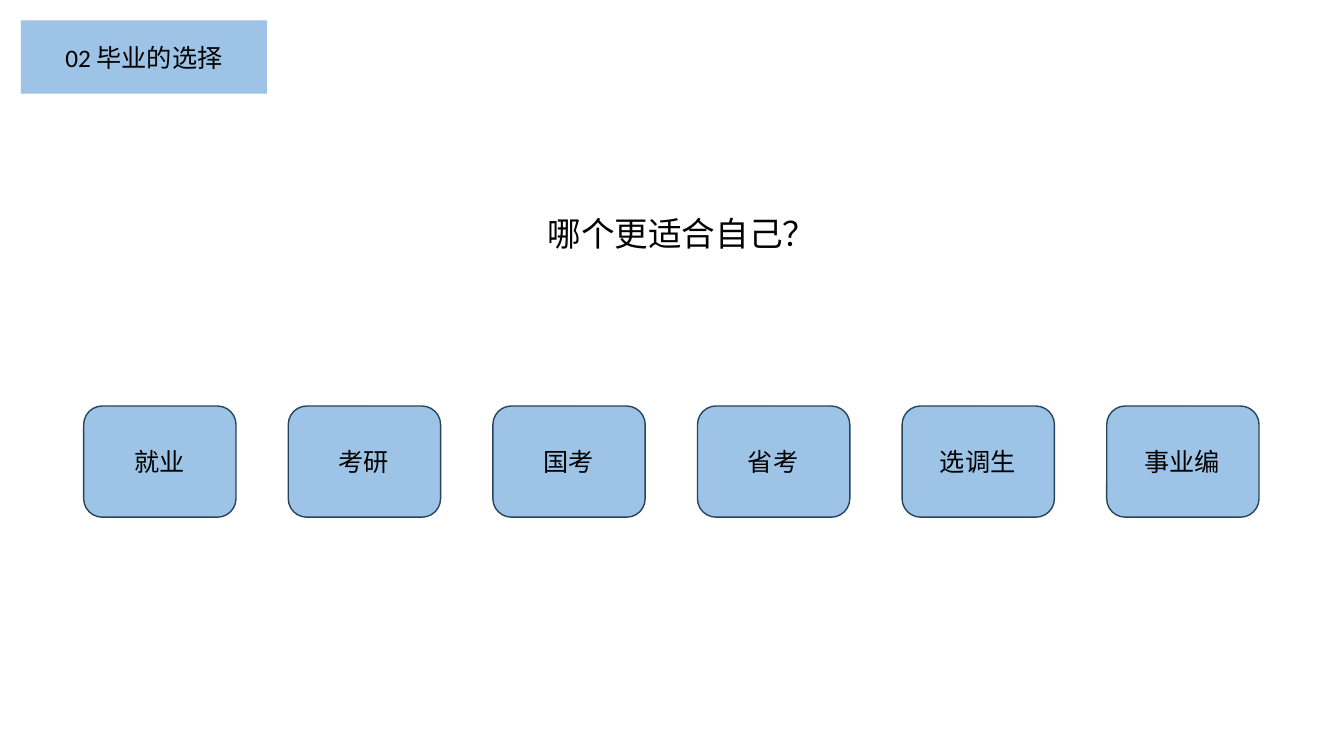
from pptx import Presentation
from pptx import util as u
from pptx.dml import color
from pptx.enum import shapes, text

COLORS = {"fill": "9DC3E6", "line": "28445D", "text": "000000"}
CHOICES = ["就业", "考研", "国考", "省考", "选调生", "事业编"]


class Deck:
    font = "Calibri"

    def __init__(self, s):
        self.s = s

    def rgb(self, name):
        return color.RGBColor.from_string(COLORS[name])

    def run(self, p, words, size):
        r = p.add_run()
        r.text = words
        r.font.name = self.font
        r.font.size = u.Pt(size)
        r.font.color.rgb = self.rgb("text")

    def box(self, kind, x, y, w, h, line=None):
        sp = self.s.shapes.add_shape(kind, u.Pt(x), u.Pt(y), u.Pt(w), u.Pt(h))
        sp.shadow.inherit = False
        sp.fill.solid()
        sp.fill.fore_color.rgb = self.rgb("fill")
        if line:
            sp.line.color.rgb = self.rgb(line)
            sp.line.width = u.Pt(1)
        else:
            sp.line.fill.background()
        return sp

    def banner(self, words, x, y, w, h):
        tf = self.box(shapes.MSO_SHAPE.RECTANGLE, x, y, w, h).text_frame
        tf.vertical_anchor = text.MSO_ANCHOR.MIDDLE
        p = tf.paragraphs[0]
        p.alignment = text.PP_ALIGN.CENTER
        self.run(p, words, 18)

    def label(self, words, x, y, w, h, size):
        sp = self.s.shapes.add_textbox(u.Pt(x), u.Pt(y), u.Pt(w), u.Pt(h))
        tf = sp.text_frame
        tf.word_wrap = False
        tf.auto_size = text.MSO_AUTO_SIZE.SHAPE_TO_FIT_TEXT
        self.run(tf.paragraphs[0], words, size)

    def card(self, words, x, y, w, h):
        self.box(shapes.MSO_SHAPE.ROUNDED_RECTANGLE, x, y, w, h, "line")
        label_w = 18 * len(words) + 15
        self.label(words, x + (w - label_w) / 2, y + 25.2, label_w, 29, 18)


def main():
    prs = Presentation()
    prs.slide_width, prs.slide_height = u.Pt(960), u.Pt(540)
    deck = Deck(prs.slides.add_slide(prs.slide_layouts[6]))
    deck.banner("02 毕业的选择", 15, 14.5, 175.6, 52.4)
    deck.label("哪个更适合自己？", 384, 148.3, 208, 36, 24)
    for i, choice in enumerate(CHOICES):
        deck.card(choice, 59.8 + 146.15 * i, 290, 108.8, 79.4)
    prs.save("out.pptx")


if __name__ == "__main__":
    main()
